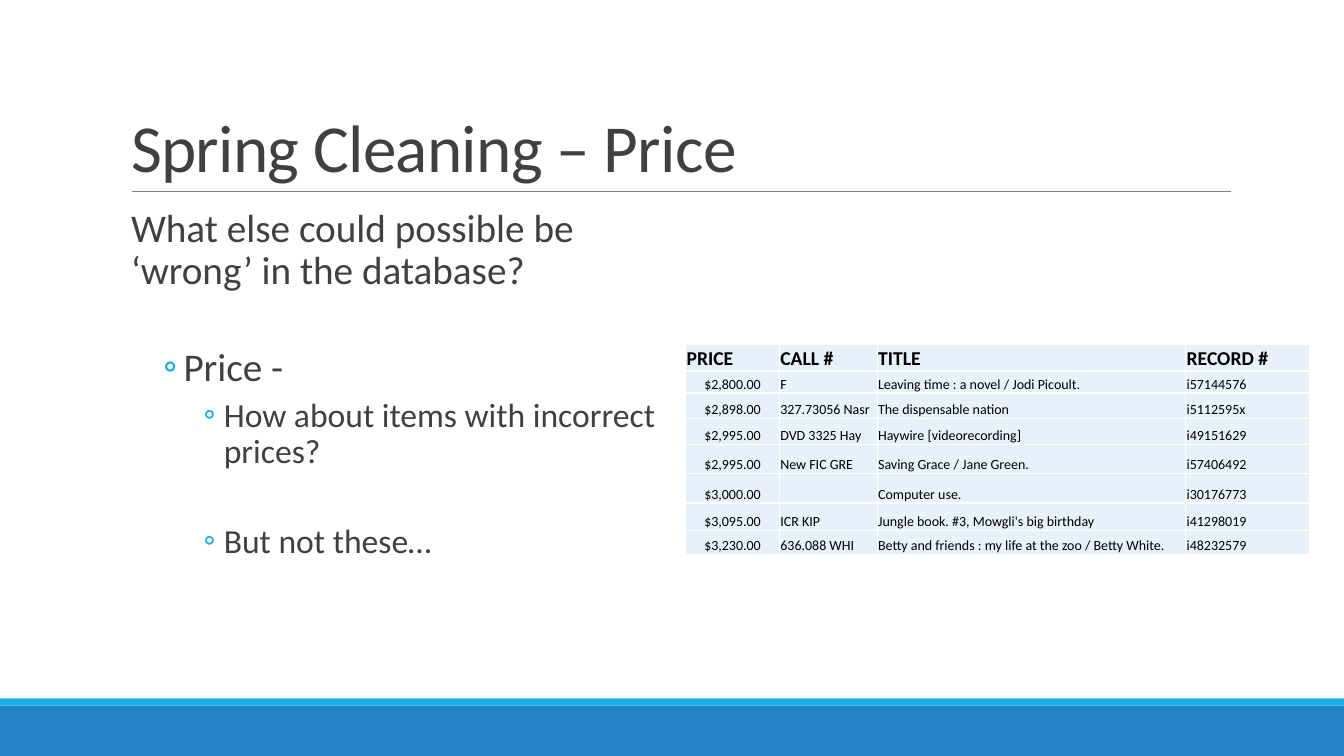
from pptx import Presentation
from pptx.dml.color import RGBColor
from pptx.enum.shapes import MSO_CONNECTOR, MSO_SHAPE
from pptx.enum.text import MSO_ANCHOR, MSO_AUTO_SIZE, PP_ALIGN
from pptx.oxml.ns import qn
from pptx.util import Inches, Pt
from lxml import etree

RECT, STRAIGHT = MSO_SHAPE.RECTANGLE, MSO_CONNECTOR.STRAIGHT
BOTTOM, TOP = MSO_ANCHOR.BOTTOM, MSO_ANCHOR.TOP
LEFT, CENTER = PP_ALIGN.LEFT, PP_ALIGN.CENTER
NO_FIT = MSO_AUTO_SIZE.NONE

W, H = 13.33, 7.5
FONT = "Calibri"
TEXT, BLUE, CYAN, GREY = "404040", "2683C6", "1CADE4", "808080"
BLACK, WHITE, CELL = "000000", "FFFFFF", "E8F1FA"

# text, level, size, left margin, hanging indent, space before, space after, bullet
BODY = [
    ("What else could possible be ‘wrong’ in the database?", 0, 28, 0.1, 0, 12, 2, None),
    ("Price -", 2, 28, 0.62, 0.2, 36.5, 4, "◦"),
    ("How about items with incorrect prices?", 4, 24, 1.02, 0.2, 2, 4, "◦"),
    ("But not these…", 4, 24, 1.02, 0.2, 34.4, 4, "◦"),
]
COLS = [0.93, 0.97, 3.06, 1.23]
ROWS = [0.26, 0.22, 0.25, 0.26, 0.29, 0.28, 0.27, 0.24]
PRICES = [
    ("PRICE", "CALL #", "TITLE", "RECORD #"),
    ("$2,800.00", "F", "Leaving time : a novel / Jodi Picoult.", "i57144576"),
    ("$2,898.00", "327.73056 Nasr", "The dispensable nation", "i5112595x"),
    ("$2,995.00", "DVD 3325 Hay", "Haywire [videorecording]", "i49151629"),
    ("$2,995.00", "New FIC GRE", "Saving Grace / Jane Green.", "i57406492"),
    ("$3,000.00", "", "Computer use.", "i30176773"),
    ("$3,095.00", "ICR KIP", "Jungle book. #3, Mowgli's big birthday", "i41298019"),
    ("$3,230.00", "636.088 WHI",
     "Betty and friends : my life at the zoo / Betty White.", "i48232579"),
]


def rgb(value):
    return RGBColor.from_string(value)


def write(p, text, size, color=TEXT, bold=False, align=LEFT, line=None,
          before=0, after=0):
    p.alignment, p.line_spacing = align, line
    p.space_before, p.space_after = Pt(before), Pt(after)
    r = p.add_run()
    r.text = text
    r.font.name, r.font.size, r.font.bold = FONT, Pt(size), bold
    r.font.color.rgb = rgb(color)
    return r


def place(sp, box):
    sp.left, sp.top, sp.width, sp.height = map(Inches, box)


def set_bullet(p, char, margin, hanging):
    pPr = p._p.get_or_add_pPr()
    pPr.set("marL", str(Inches(margin)))
    pPr.set("indent", str(-Inches(hanging)))
    if char is None:
        etree.SubElement(pPr, qn("a:buNone"))
        return
    color = etree.SubElement(pPr, qn("a:buClr"))
    etree.SubElement(color, qn("a:srgbClr"), val=CYAN)
    etree.SubElement(pPr, qn("a:buFont"), typeface=FONT)
    etree.SubElement(pPr, qn("a:buChar"), char=char)


def add_band(s, box, color):
    sp = s.shapes.add_shape(RECT, *map(Inches, box))
    sp.shadow.inherit = False
    sp.fill.solid()
    sp.fill.fore_color.rgb = rgb(color)
    sp.line.fill.background()


def add_frame(s, rule):
    """Footer bands and the rule under the title."""
    add_band(s, (0, H - 0.5, W, 0.5), BLUE)
    add_band(s, (0, H - 0.57, W, 0.07), CYAN)
    x, y, width = rule
    line = s.shapes.add_connector(STRAIGHT, *map(Inches, (x, y, x + width, y)))
    line.line.color.rgb = rgb(GREY)
    line.line.width = Pt(0.5)
    etree.SubElement(line._element.spPr, qn("a:effectLst"))


def add_title(s, text, box):
    sp = s.shapes.title
    place(sp, box)
    tf = sp.text_frame
    tf.auto_size, tf.word_wrap, tf.vertical_anchor = NO_FIT, True, BOTTOM
    r = write(tf.paragraphs[0], text, 48, line=0.85)
    r.font._element.set("spc", "-50")


def add_body(s, items, box):
    sp = s.placeholders[1]
    place(sp, box)
    tf = sp.text_frame
    tf.auto_size, tf.word_wrap, tf.vertical_anchor = NO_FIT, True, TOP
    tf.margin_left = tf.margin_right = 0
    for i, (text, level, size, margin, hanging, before, after, char) in enumerate(items):
        p = tf.add_paragraph() if i else tf.paragraphs[0]
        p.level = level
        write(p, text, size, line=0.9, before=before, after=after)
        set_bullet(p, char, margin, hanging)


def set_borders(cell):
    tcPr = cell._tc.get_or_add_tcPr()
    for i, side in enumerate(("lnL", "lnR", "lnT", "lnB")):
        ln = etree.Element(qn("a:" + side), w=str(Pt(1)))
        fill = etree.SubElement(ln, qn("a:solidFill"))
        etree.SubElement(fill, qn("a:srgbClr"), val=WHITE)
        tcPr.insert(i, ln)


def add_price_table(s, rows, left, top):
    box = map(Inches, (left, top, sum(COLS), sum(ROWS)))
    table = s.shapes.add_table(len(ROWS), len(COLS), *box).table
    table.horz_banding = table.first_row = False
    for column, width in zip(table.columns, COLS):
        column.width = Inches(width)
    for i, (row, height) in enumerate(zip(table.rows, ROWS)):
        row.height = Inches(height)
        for j, (cell, text) in enumerate(zip(row.cells, rows[i])):
            header = i == 0
            cell.vertical_anchor = BOTTOM
            cell.margin_left = cell.margin_right = cell.margin_top = Inches(0.01)
            cell.margin_bottom = 0
            cell.fill.solid()
            cell.fill.fore_color.rgb = rgb(CELL)
            set_borders(cell)
            write(cell.text_frame.paragraphs[0], text, 14 if header else 10, BLACK,
                  bold=header, align=CENTER if j == 0 and not header else LEFT)


def main():
    prs = Presentation()
    prs.slide_width, prs.slide_height = Inches(W), Inches(H)
    s = prs.slides.add_slide(prs.slide_layouts[1])
    add_frame(s, (1.31, 1.9, 10.9))
    add_title(s, "Spring Cleaning – Price", (1.2, 0.31, 11, 1.59))
    add_body(s, BODY, (1.2, 2.02, 5.4, 4.4))
    add_price_table(s, PRICES, 6.8, 3.42)
    prs.save("out.pptx")


if __name__ == "__main__":
    main()
